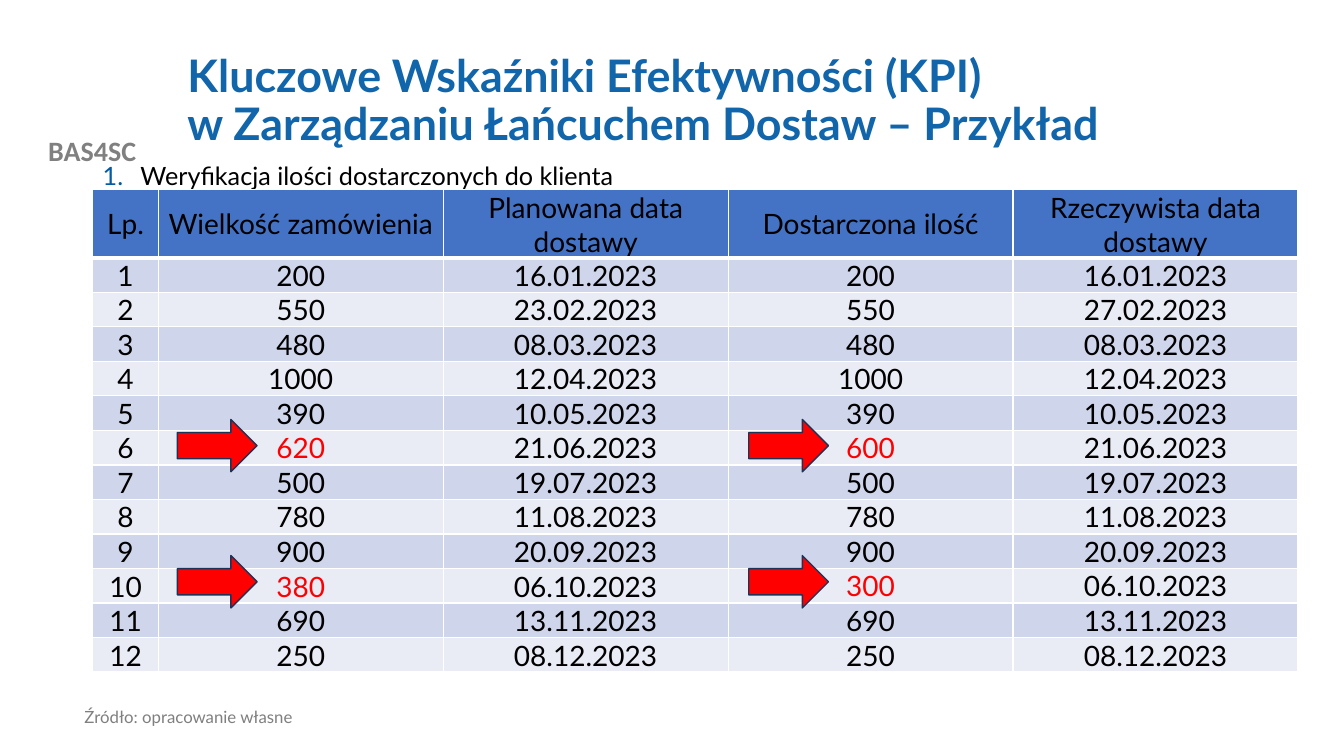
from dataclasses import dataclass

from lxml import etree
from pptx import Presentation
from pptx import util as u
from pptx.dml.color import RGBColor
from pptx.enum import shapes, text
from pptx.oxml import ns

ALIGN, ANCHOR, FIT = text.PP_ALIGN, text.MSO_ANCHOR, text.MSO_AUTO_SIZE


@dataclass(frozen=True)
class Theme:
    """Colours, fonts and type sizes."""
    title: str = "1065AB"
    number: str = "015BA6"
    ink: str = "000000"
    label: str = "808080"
    source: str = "7F7F7F"
    alert: str = "FF0000"
    edge: str = "1E3256"
    rule: str = "FFFFFF"
    head: str = "4472C4"
    bands: tuple = ("CFD5EA", "E9EBF5")
    face: str = "Lato"
    plain: str = "Calibri"
    large: int = 32
    cell: int = 20
    body: int = 18
    small: int = 12


def put(item, **vals):
    """Set each named value on the item."""
    for name, val in vals.items():
        setattr(item, name, val)


def rgb(code):
    """Turn a hex code into a colour."""
    return RGBColor.from_string(code)


def paint(fill, code):
    """Make a fill solid in one colour."""
    fill.solid()
    fill.fore_color.rgb = rgb(code)


def node(parent, tag, **vals):
    """Add a drawing element with attributes."""
    return etree.SubElement(parent, ns.qn("a:" + tag), vals)


class Page:
    """Draws elements on one slide in one style."""

    def __init__(self, slide, style):
        """Keep the slide and the style."""
        self.slide, self.style = slide, style

    def letter(self, frame, words, size, color, bold=False, face=None, **form):
        """Fill a frame with one styled paragraph."""
        para = frame.paragraphs[0]
        para.text = words
        put(para, **form)
        for run in para.runs:
            put(run.font, size=u.Pt(size), bold=bold, name=face or self.style.face)
            run.font.color.rgb = rgb(color)
        return para

    def title(self, words, box):
        """Move and format the title placeholder."""
        shape = self.slide.shapes.title
        put(shape, **dict(zip(("left", "top", "width", "height"), map(u.Cm, box))))
        put(shape.text_frame, word_wrap=True, auto_size=FIT.NONE,
            vertical_anchor=ANCHOR.MIDDLE)
        self.letter(shape.text_frame, words, self.style.large, self.style.title,
                    bold=True, alignment=ALIGN.LEFT, line_spacing=0.9)

    def note(self, words, box, size, color, fit=FIT.NONE, **form):
        """Add a text box and return its paragraph."""
        frame = self.slide.shapes.add_textbox(*map(u.Cm, box)).text_frame
        put(frame, word_wrap=True, auto_size=fit)
        return self.letter(frame, words, size, color, **form)

    def item(self, words, box):
        """Add a numbered line."""
        para = self.note(words, box, self.style.body, self.style.ink,
                         alignment=ALIGN.JUSTIFY, line_spacing=0.9)
        prop = para._p.get_or_add_pPr()
        indent = u.Cm(0.95)
        prop.set("marL", str(indent))
        prop.set("indent", str(-indent))
        node(node(prop, "buClr"), "srgbClr", val=self.style.number)
        node(prop, "buAutoNum", type="arabicPeriod")

    def cell(self, cell, words, fill, color, anchor, base):
        """Format one table cell."""
        put(cell, vertical_anchor=anchor, margin_left=u.Cm(0.02),
            margin_right=u.Cm(0.02), margin_top=u.Cm(0.02), margin_bottom=0)
        self.letter(cell.text_frame, words, self.style.cell, color,
                    alignment=ALIGN.CENTER)
        prop = cell._tc.get_or_add_tcPr()
        for side, width in (("L", 1), ("R", 1), ("T", 1), ("B", base)):
            line = node(prop, "ln" + side, w=str(u.Pt(width)))
            node(node(line, "solidFill"), "srgbClr", val=self.style.rule)
        paint(cell.fill, fill)

    def table(self, rows, spot, widths, heights):
        """Add a banded table, marking orders not delivered in full."""
        look = self.style
        grid = self.slide.shapes.add_table(
            len(rows), len(widths), *map(u.Cm, (*spot, sum(widths), sum(heights)))).table
        for col, width in zip(grid.columns, widths):
            col.width = u.Cm(width)
        for r, (row, height) in enumerate(zip(rows, heights)):
            grid.rows[r].height = u.Cm(height)
            short = r > 0 and row[1] != row[3]
            fill = look.bands[(r - 1) % 2] if r else look.head
            for c, words in enumerate(row):
                color = look.alert if short and c in (1, 3) else look.ink
                anchor = ANCHOR.BOTTOM if r and c > 2 else ANCHOR.MIDDLE
                self.cell(grid.cell(r, c), words, fill, color, anchor, 1 if r else 3)

    def arrow(self, left, top):
        """Add a block arrow pointing right."""
        shape = self.slide.shapes.add_shape(
            shapes.MSO_SHAPE.RIGHT_ARROW, *map(u.Cm, (left, top, 2.01, 1.32)))
        shape.shadow.inherit = False
        paint(shape.fill, self.style.alert)
        paint(shape.line.fill, self.style.edge)
        shape.line.width = u.Pt(1)


HEAD = ("Lp.", "Wielkość zamówienia", "Planowana data dostawy",
        "Dostarczona ilość", "Rzeczywista data dostawy")
ORDERS = (
    (200, "16.01.2023"), (550, "23.02.2023"), (480, "08.03.2023"),
    (1000, "12.04.2023"), (390, "10.05.2023"), (620, "21.06.2023"),
    (500, "19.07.2023"), (780, "11.08.2023"), (900, "20.09.2023"),
    (380, "06.10.2023"), (690, "13.11.2023"), (250, "08.12.2023"),
)
CHANGES = {2: (550, "27.02.2023"), 6: (600, "21.06.2023"), 10: (300, "06.10.2023")}


def main():
    """Build the slide and save it."""
    deck = Presentation()
    put(deck, slide_width=u.Cm(33.87), slide_height=u.Cm(19.05))
    look = Theme()
    page = Page(deck.slides.add_slide(deck.slide_layouts[5]), look)
    page.note("BAS4SC", (0, 3.25, 4.65, 1.12), look.cell, look.label,
              fit=FIT.SHAPE_TO_FIT_TEXT, bold=True, face=look.plain,
              alignment=ALIGN.CENTER)
    page.title("Kluczowe Wskaźniki Efektywności (KPI)\v"
               "w Zarządzaniu Łańcuchem Dostaw – Przykład", (4.47, 1.02, 27.08, 3.1))
    page.item("Weryfikacja ilości dostarczonych do klienta", (2.34, 3.99, 31.06, 2.9))
    page.note("Źródło: opracowanie własne", (1.88, 17.73, 12.73, 1.32),
              look.small, look.source, line_spacing=0.9)
    rows = [HEAD]
    for num, plan in enumerate(ORDERS, 1):
        rows.append([str(val) for val in (num, *plan, *CHANGES.get(num, plan))])
    page.table(rows, (2.34, 4.78), [1.65] + [7.18] * 4, [1.68] + [0.87] * len(ORDERS))
    for top in (10.57, 14):
        for left in (4.47, 18.87):
            page.arrow(left, top)
    deck.save("out.pptx")


if __name__ == "__main__":
    main()
